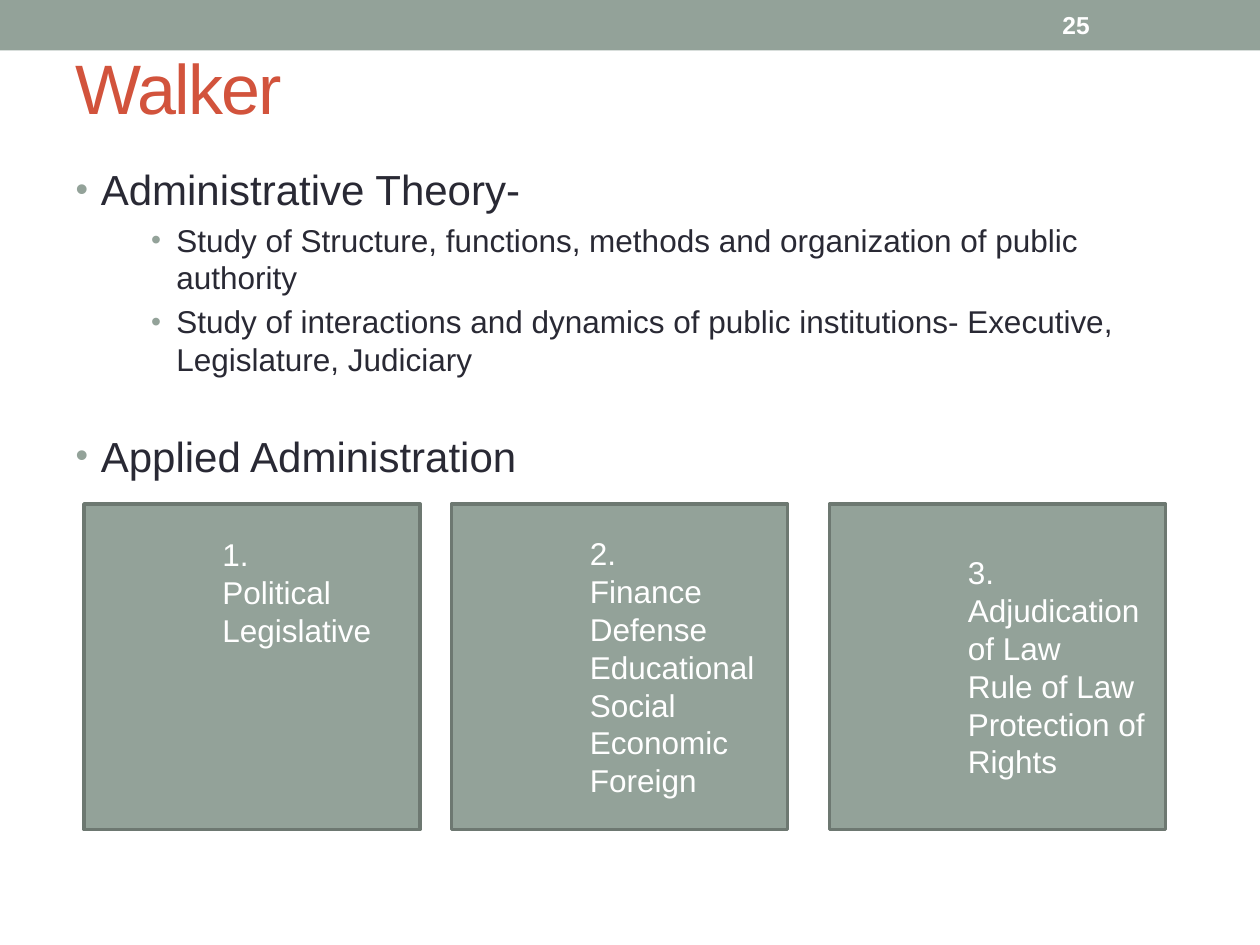
from lxml import etree
from pptx import Presentation
from pptx.dml.color import RGBColor
from pptx.enum.shapes import MSO_SHAPE
from pptx.enum.text import MSO_ANCHOR, MSO_AUTO_SIZE, PP_ALIGN
from pptx.oxml.ns import qn
from pptx.util import Pt

RECTANGLE = MSO_SHAPE.RECTANGLE
TOP, MIDDLE = MSO_ANCHOR.TOP, MSO_ANCHOR.MIDDLE
LEFT = PP_ALIGN.LEFT
NO_FIT = MSO_AUTO_SIZE.NONE

COLORS = {"sage": "93A299", "edge": "6D7871", "rust": "D2533C",
          "ink": "292934", "white": "FFFFFF"}

# text, level, space before in points
BODY = [
    ("Administrative Theory-", 0, 4.8),
    ("Study of Structure, functions, methods and organization of public authority", 2, 3.6),
    ("Study of interactions and dynamics of public institutions- "
     "Executive, Legislature, Judiciary", 2, 3.6),
    ("Applied Administration", 0, 30),
]
# level: text size, left margin, bullet size in percent
BODY_LEVELS = {0: (24, 14.4, 85), 2: (18, 57.6, 90)}
HANGING = 14.4

# left edge, anchor, lines
BRANCHES = [
    (48, TOP, ["1.", "Political", "Legislative"]),
    (258, MIDDLE, ["2.", "Finance", "Defense", "Educational", "Social",
                   "Economic", "Foreign"]),
    (474, MIDDLE, ["3.", "Adjudication of Law", "Rule of Law", "Protection of Rights"]),
]


class SlideBuilder:
    """Holds the slide's style and adds its elements; lengths are points."""
    font = "Arial"

    def __init__(self, page):
        self.page = page

    def color(self, name):
        return RGBColor.from_string(COLORS[name])

    def place(self, shape, left, top, width, height):
        frame = {"left": left, "top": top, "width": width, "height": height}
        for name, value in frame.items():
            setattr(shape, name, Pt(value))

    def prepare(self, frame, anchor):
        settings = {"word_wrap": True, "auto_size": NO_FIT, "vertical_anchor": anchor}
        for name, value in settings.items():
            setattr(frame, name, value)

    def add_text(self, para, text, size, color, bold=False):
        para.alignment = LEFT
        span = para.add_run()
        span.text = text
        for name, value in {"name": self.font, "size": Pt(size), "bold": bold}.items():
            setattr(span.font, name, value)
        span.font.color.rgb = self.color(color)
        return span

    def paragraphs(self, frame, count):
        return [frame.paragraphs[0]] + [frame.add_paragraph() for _ in range(count - 1)]

    def indent(self, para, margin, first_line=0):
        properties = para._p.get_or_add_pPr()
        properties.set("marL", str(Pt(margin)))
        properties.set("indent", str(Pt(first_line)))

    def bullet(self, para, percent):
        properties = para._p.get_or_add_pPr()
        tint = etree.SubElement(properties, qn("a:buClr"))
        etree.SubElement(tint, qn("a:srgbClr"), val=COLORS["sage"])
        etree.SubElement(properties, qn("a:buSzPct"), val=str(percent * 1000))
        etree.SubElement(properties, qn("a:buFont"), typeface=self.font)
        etree.SubElement(properties, qn("a:buChar"), char="•")

    def rectangle(self, left, top, width, height, line=None):
        box = self.page.shapes.add_shape(
            RECTANGLE, Pt(left), Pt(top), Pt(width), Pt(height))
        box.shadow.inherit = False
        box.fill.solid()
        box.fill.fore_color.rgb = self.color("sage")
        if line:
            box.line.color.rgb = self.color(line)
            box.line.width = Pt(2.08)
        else:
            box.line.fill.background()
        return box

    def title(self, text):
        box = self.page.shapes.title
        self.place(box, 36, 21.6, 648, 56.16)
        self.prepare(box.text_frame, MIDDLE)
        span = self.add_text(box.text_frame.paragraphs[0], text, 40, "rust")
        span._r.get_or_add_rPr().set("spc", "-100")

    def body(self, items):
        box = self.page.placeholders[1]
        self.place(box, 36, 90, 648, 392.4)
        self.prepare(box.text_frame, TOP)
        for para, (text, level, before) in zip(
                self.paragraphs(box.text_frame, len(items)), items):
            size, margin, percent = BODY_LEVELS[level]
            para.level = level
            para.space_before = Pt(before)
            self.indent(para, margin, -HANGING)
            self.bullet(para, percent)
            self.add_text(para, text, size, "ink")

    def page_number(self, text):
        box = self.page.shapes.add_textbox(Pt(600), Pt(1.44), Pt(84), Pt(25.92))
        self.prepare(box.text_frame, MIDDLE)
        self.add_text(box.text_frame.paragraphs[0], text, 14, "white", bold=True)

    def branch(self, left, anchor, lines):
        box = self.rectangle(left, 288, 192, 186, line="edge")
        frame = box.text_frame
        self.prepare(frame, anchor)
        if anchor == TOP:
            frame.margin_top = Pt(18)
        for para, text in zip(self.paragraphs(frame, len(lines)), lines):
            para.level = 2
            self.indent(para, 72)
            self.add_text(para, text, 18, "white")


def main():
    deck = Presentation()
    deck.slide_width, deck.slide_height = Pt(720), Pt(540)
    page = deck.slides.add_slide(deck.slide_layouts[1])
    builder = SlideBuilder(page)
    band = builder.rectangle(0, 0, 720, 28.8)
    page.shapes._spTree.insert(2, band._element)
    builder.title("Walker")
    builder.body(BODY)
    builder.page_number("25")
    for branch in BRANCHES:
        builder.branch(*branch)
    deck.save("out.pptx")


if __name__ == "__main__":
    main()
